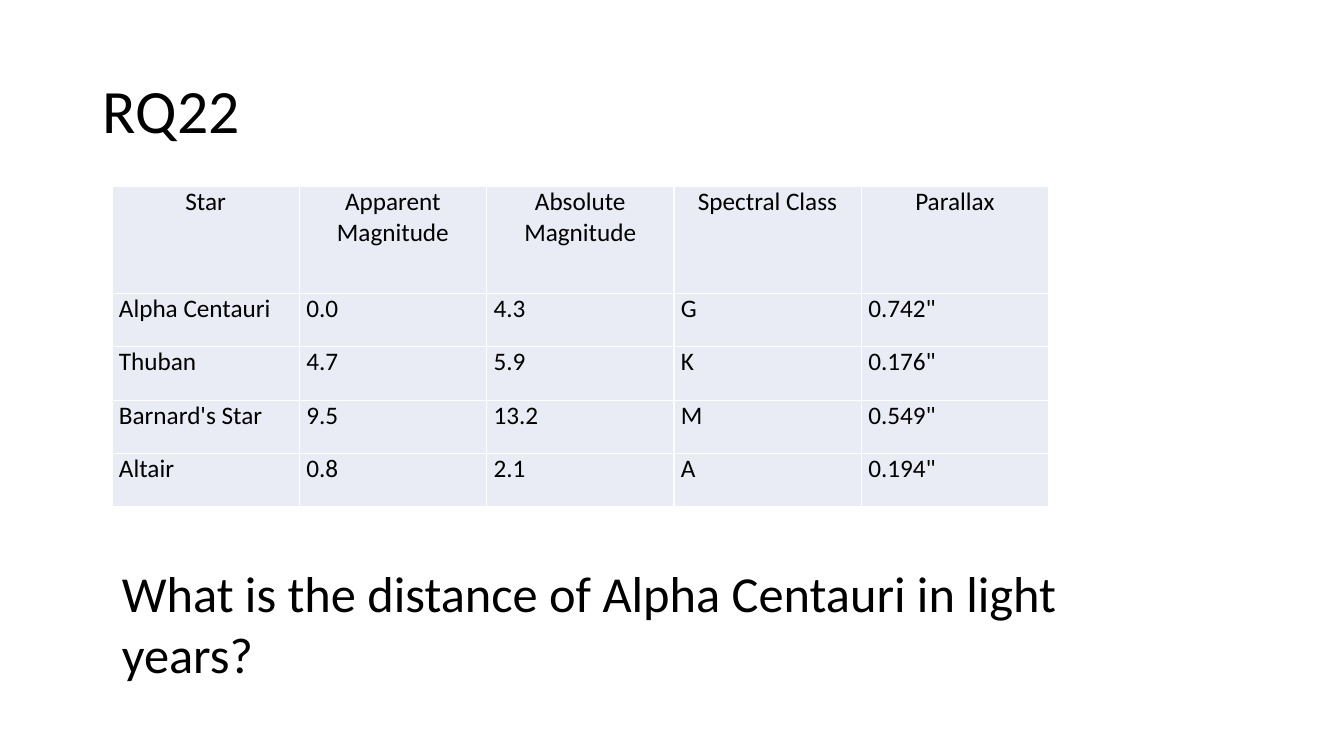
import dataclasses
import pptx
import pptx.dml.color
import pptx.enum.text
import pptx.oxml
import pptx.oxml.ns
import pptx.util

ALIGN = pptx.enum.text.PP_ALIGN
ANCHOR = pptx.enum.text.MSO_ANCHOR


@dataclasses.dataclass(frozen=True)
class Theme:
    font: str = "Calibri"
    ink: str = "000000"
    fill: str = "E9EBF5"
    rule: str = "FFFFFF"
    title: int = 44
    query: int = 36
    cell: int = 18


THEME = Theme()
WIDTH = pptx.util.Inches(13.33)
HEIGHT = pptx.util.Inches(7.5)

STARS = [
    ["Star", "Apparent Magnitude", "Absolute Magnitude", "Spectral Class", "Parallax"],
    ["Alpha Centauri", "0.0", "4.3", "G", '0.742"'],
    ["Thuban", "4.7", "5.9", "K", '0.176"'],
    ["Barnard's Star", "9.5", "13.2", "M", '0.549"'],
    ["Altair", "0.8", "2.1", "A", '0.194"'],
]


def share(left, top, width, height):
    return (
        int(WIDTH * left / 100),
        int(HEIGHT * top / 100),
        int(WIDTH * width / 100),
        int(HEIGHT * height / 100),
    )


def write(frame, text, size, align=ALIGN.LEFT):
    line = frame.paragraphs[0]
    line.alignment = align
    run = line.add_run()
    run.text = text
    run.font.name = THEME.font
    run.font.size = pptx.util.Pt(size)
    run.font.color.rgb = pptx.dml.color.RGBColor.from_string(THEME.ink)
    return line


def add_title(slide, text, box):
    title = slide.shapes.title
    title.left, title.top, title.width, title.height = box
    title.text_frame.vertical_anchor = ANCHOR.MIDDLE
    write(title.text_frame, text, THEME.title).line_spacing = 0.9


def add_query(slide, text, box):
    frame = slide.shapes.add_textbox(*box).text_frame
    frame.word_wrap = True
    frame.auto_size = pptx.enum.text.MSO_AUTO_SIZE.SHAPE_TO_FIT_TEXT
    write(frame, text, THEME.query)


def edge(cell):
    props = cell._tc.get_or_add_tcPr()
    space = pptx.oxml.ns.nsdecls("a")
    for side in "LRTB":
        props.append(pptx.oxml.parse_xml(
            f'<a:ln{side} {space} w="{pptx.util.Pt(1)}"><a:solidFill>'
            f'<a:srgbClr val="{THEME.rule}"/></a:solidFill></a:ln{side}>'
        ))


def style(cell, text, align):
    cell.margin_left = cell.margin_right = pptx.util.Inches(0.07)
    cell.margin_top = cell.margin_bottom = 0
    write(cell.text_frame, text, THEME.cell, align)
    edge(cell)
    cell.fill.solid()
    cell.fill.fore_color.rgb = pptx.dml.color.RGBColor.from_string(THEME.fill)


def add_grid(slide, data, box):
    table = slide.shapes.add_table(len(data), len(data[0]), *box).table
    table.horz_banding = False
    unit = box[3] // (len(data) + 1)
    for r, texts in enumerate(data):
        table.rows[r].height = unit if r else 2 * unit
        for c, text in enumerate(texts):
            style(table.cell(r, c), text, ALIGN.LEFT if r else ALIGN.CENTER)


def main():
    deck = pptx.Presentation()
    deck.slide_width, deck.slide_height = WIDTH, HEIGHT
    slide = deck.slides.add_slide(deck.slide_layouts.get_by_name("Title Only"))
    add_title(slide, "RQ22", share(6.9, 5.33, 86.27, 19.33))
    add_grid(slide, STARS, share(8.33, 24.67, 69.7, 42.4))
    add_query(
        slide,
        "What is the distance of Alpha Centauri in light years?",
        share(8.33, 73.73, 72.69, 17.47),
    )
    deck.save("out.pptx")


if __name__ == "__main__":
    main()
